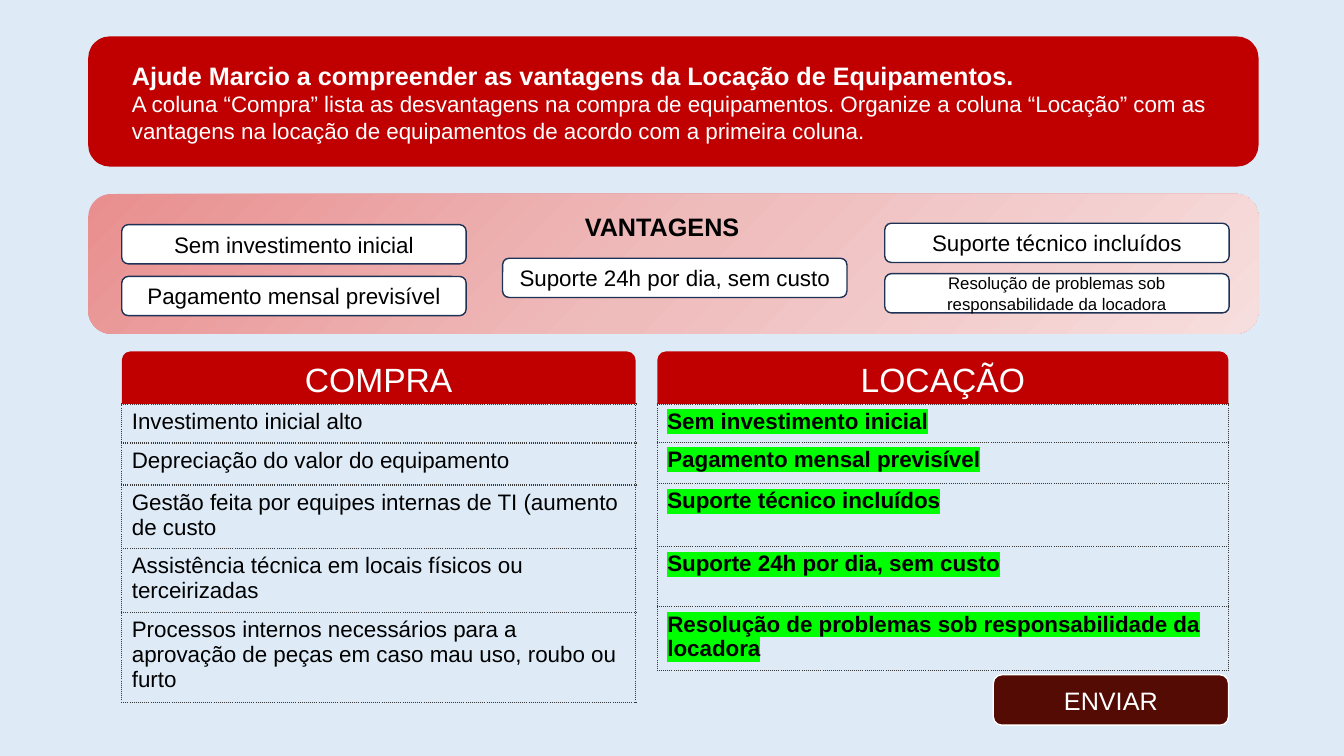
from lxml import etree
from pptx import Presentation
from pptx.dml.color import RGBColor
from pptx.enum.shapes import MSO_SHAPE
from pptx.enum.text import MSO_ANCHOR, PP_ALIGN
from pptx.oxml import parse_xml
from pptx.oxml.ns import nsdecls, qn
from pptx.util import Pt

ROUNDED = MSO_SHAPE.ROUNDED_RECTANGLE
ROUNDED_TOP = MSO_SHAPE.ROUND_2_SAME_RECTANGLE
LEFT, CENTER = PP_ALIGN.LEFT, PP_ALIGN.CENTER
TOP, MIDDLE = MSO_ANCHOR.TOP, MSO_ANCHOR.MIDDLE
TITLE_ONLY = 5

FONT = "Arial"
COLORS = {
    "background": "DEEBF7", "red": "C00000", "maroon": "530B03",
    "white": "FFFFFF", "black": "000000", "navy": "1E3256",
    "border": "3B3838", "highlight": "00FF00",
}
PANEL_GRADIENT = [(0, "E98F8F"), (50, "EFBCBC"), (100, "F7DEDE")]

HEADING = "Ajude Marcio a compreender as vantagens da Locação de Equipamentos."
INSTRUCTION = (
    "A coluna “Compra” lista as desvantagens na compra de equipamentos. "
    "Organize a coluna “Locação” com as vantagens na locação de equipamentos "
    "de acordo com a primeira coluna."
)

# Each advantage: offset in the panel, text size, lines
ADVANTAGES = [
    (24, 22, 16, ["Sem investimento inicial"]),
    (24, 59, 16, ["Pagamento mensal previsível"]),
    (296, 46, 16, ["Suporte 24h por dia, sem custo"]),
    (569, 21, 16, ["Suporte técnico incluídos"]),
    (569, 57, 12, ["Resolução de problemas sob", "responsabilidade da locadora"]),
]
# Each row: height, text
PURCHASE = [
    (28, "Investimento inicial alto"),
    (30, "Depreciação do valor do equipamento"),
    (45.5, "Gestão feita por equipes internas de TI (aumento de custo"),
    (45.5, "Assistência técnica em locais físicos ou terceirizadas"),
    (64.5, "Processos internos necessários para a aprovação de peças "
           "em caso mau uso, roubo ou furto"),
]
RENTAL = [
    (27.5, "Sem investimento inicial"),
    (29.5, "Pagamento mensal previsível"),
    (45, "Suporte técnico incluídos"),
    (43, "Suporte 24h por dia, sem custo"),
    (45.5, "Resolução de problemas sob responsabilidade da locadora"),
]


def rgb(name):
    return RGBColor.from_string(COLORS[name])


def add_run(paragraph, text, size, color, bold=False):
    run = paragraph.add_run()
    run.text = text
    run.font.size = Pt(size)
    run.font.bold = bold
    run.font.color.rgb = rgb(color)
    run.font.name = FONT
    return run


def write_lines(frame, lines, size, color, bold=False):
    """Centred lines, one paragraph each."""
    frame.word_wrap = True
    for index, line in enumerate(lines):
        paragraph = frame.add_paragraph() if index else frame.paragraphs[0]
        paragraph.alignment = CENTER
        add_run(paragraph, line, size, color, bold)


def add_block(slide, kind, box, fill, line=None, lines=(), size=16, color="white"):
    block = slide.shapes.add_shape(kind, *map(Pt, box))
    block.shadow.inherit = False
    block.fill.solid()
    block.fill.fore_color.rgb = rgb(fill)
    if line:
        block.line.color.rgb = rgb(line)
        block.line.width = Pt(1)
    else:
        block.line.fill.background()
    block.text_frame.vertical_anchor = MIDDLE
    write_lines(block.text_frame, lines, size, color)
    return block


def set_gradient(shape, stops, angle):
    gradient = parse_xml(f'<a:gradFill {nsdecls("a")} rotWithShape="1"><a:gsLst/></a:gradFill>')
    for position, color in stops:
        stop = etree.SubElement(gradient[0], qn("a:gs"), pos=str(position * 1000))
        etree.SubElement(stop, qn("a:srgbClr"), val=color)
    etree.SubElement(gradient, qn("a:lin"), ang=str(angle * 60000), scaled="1")
    properties = shape._element.spPr
    properties.replace(properties.find(qn("a:solidFill")), gradient)


def set_dotted_borders(cell):
    properties = cell._tc.get_or_add_tcPr()
    for index, side in enumerate(("lnL", "lnR", "lnT", "lnB")):
        properties.insert(index, parse_xml(
            f'<a:{side} {nsdecls("a")} w="12700"><a:solidFill>'
            f'<a:srgbClr val="{COLORS["border"]}"/></a:solidFill>'
            f'<a:prstDash val="sysDot"/></a:{side}>'))


def highlight(run):
    mark = parse_xml(f'<a:highlight {nsdecls("a")}>'
                     f'<a:srgbClr val="{COLORS["highlight"]}"/></a:highlight>')
    run.font._element.find(qn("a:solidFill")).addnext(mark)


def add_banner(slide, left, top, width, height):
    add_block(slide, ROUNDED, (left, top, width, height), "red")
    title = slide.shapes.title
    title.left, title.top = Pt(left + 24), Pt(top + 13.5)
    title.width, title.height = Pt(width - 53), Pt(68)
    slide.shapes._spTree.append(title._element)  # bring in front of the banner
    frame = title.text_frame
    frame.word_wrap = True
    frame.vertical_anchor = TOP
    heading, instruction = frame.paragraphs[0], frame.add_paragraph()
    add_run(heading, HEADING, 18, "white", bold=True)
    add_run(instruction, INSTRUCTION, 16, "white")
    for paragraph in (heading, instruction):
        paragraph.alignment = LEFT
        paragraph.line_spacing = 1.0
        paragraph.space_before = Pt(0)


def add_advantages(slide, left, top, width, height):
    panel = add_block(slide, ROUNDED, (left, top, width, height), "white")
    set_gradient(panel, PANEL_GRADIENT, 45)
    for dx, dy, size, lines in ADVANTAGES:
        add_block(slide, ROUNDED, (left + dx, top + dy, 246, 28), "white", "navy",
                  lines, size, "black")
    caption = slide.shapes.add_textbox(Pt(left + 291), Pt(top + 9), Pt(238), Pt(29))
    write_lines(caption.text_frame, ["VANTAGENS"], 18, "black", bold=True)


def add_column(slide, left, top, width, header, rows, answers=False):
    header_height = 37.5
    frame = slide.shapes.add_table(
        len(rows), 1, Pt(left), Pt(top + header_height), Pt(width),
        Pt(sum(height for height, _ in rows)))
    table = frame.table
    table.first_row = table.horz_banding = False
    for index, (height, text) in enumerate(rows):
        table.rows[index].height = Pt(height)
        cell = table.cell(index, 0)
        cell.fill.background()
        set_dotted_borders(cell)
        run = add_run(cell.text_frame.paragraphs[0], text, 16, "black", answers)
        if answers:
            highlight(run)
    add_block(slide, ROUNDED_TOP, (left, top, width, header_height), "red",
              lines=[header], size=24)


def main():
    deck = Presentation()
    deck.slide_width, deck.slide_height = Pt(960), Pt(540)
    slide = deck.slides.add_slide(deck.slide_layouts[TITLE_ONLY])
    slide.background.fill.solid()
    slide.background.fill.fore_color.rgb = rgb("background")

    add_banner(slide, 63, 26, 836, 93)
    add_column(slide, 87, 251, 367, "COMPRA", PURCHASE)
    add_column(slide, 469.5, 251, 408, "LOCAÇÃO", RENTAL, answers=True)
    add_advantages(slide, 63, 138.5, 836, 100)
    # Submit button
    add_block(slide, ROUNDED, (709.5, 482, 168, 36), "maroon", "white", ["ENVIAR"], 18)
    deck.save("out.pptx")


if __name__ == "__main__":
    main()
